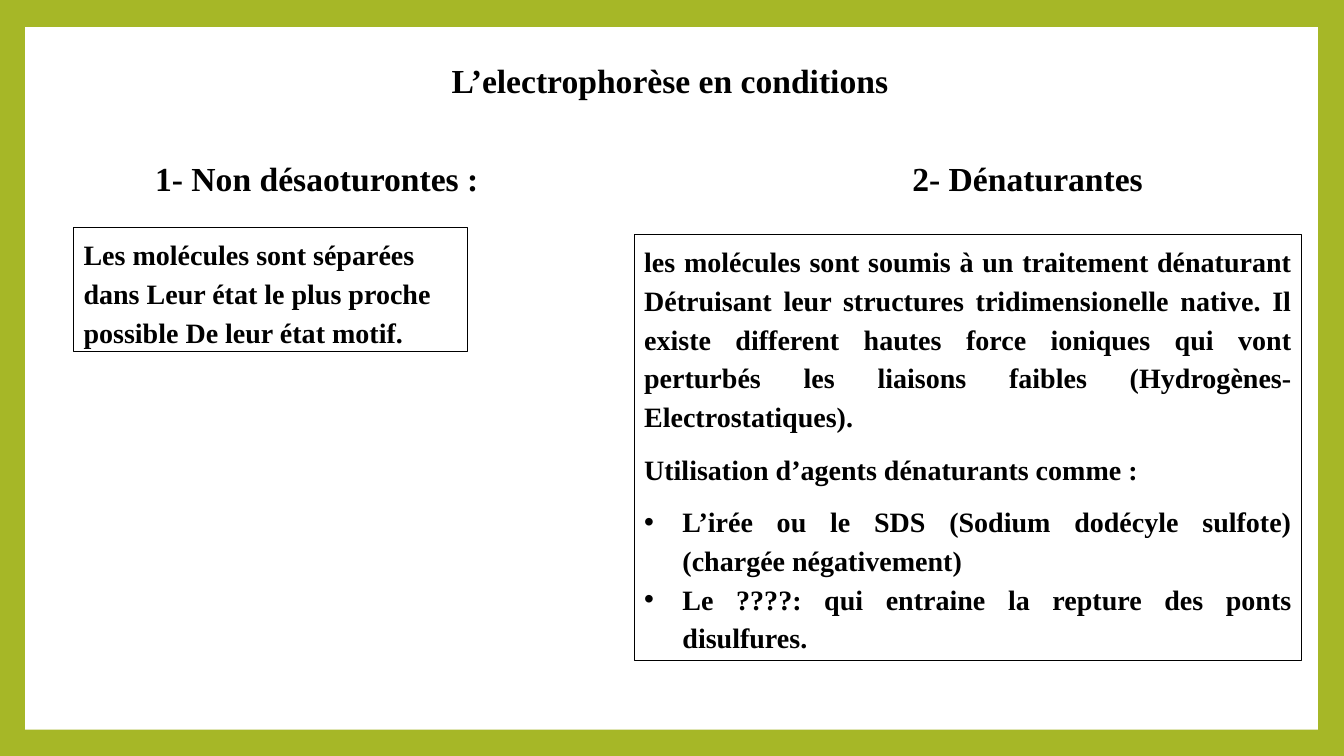
from lxml import etree
from pptx import Presentation
from pptx.dml.color import RGBColor
from pptx.enum.shapes import MSO_SHAPE
from pptx.enum.text import MSO_ANCHOR, PP_ALIGN
from pptx.oxml.ns import qn
from pptx.util import Inches, Pt

RECT = MSO_SHAPE.RECTANGLE
TOP = MSO_ANCHOR.TOP
LEFT, JUSTIFY = PP_ALIGN.LEFT, PP_ALIGN.JUSTIFY

GREEN = RGBColor(0xA6, 0xB7, 0x27)
WHITE = RGBColor(0xFF, 0xFF, 0xFF)
BLACK = RGBColor(0, 0, 0)
FONT = "Times New Roman"
HEADING_SIZE, BODY_SIZE = 24, 20
INDENT = 0.38

PANEL = (0.25, 0.27, 12.82, 6.97)
HEADING_HEIGHT = 0.5
COLUMN_TOP = 1.52
HEADINGS = [
    ("L’electrophorèse en conditions", 4.38, 0.55, 4.58),
    ("1- Non désaoturontes :", 1.44, COLUMN_TOP, 3.53),
    ("2- Dénaturantes", 8.95, COLUMN_TOP, 2.51),
]
BOXES = [
    ((6.29, 2.33, 6.62, 4.22), JUSTIFY, [
        ("les molécules sont soumis à un traitement dénaturant Détruisant leur "
         "structures tridimensionelle native. Il existe different hautes force "
         "ioniques qui vont perturbés les liaisons faibles "
         "(Hydrogènes-Electrostatiques).", False, 10),
        ("Utilisation d’agents dénaturants comme : ", False, 10),
        ("L’irée ou le SDS (Sodium dodécyle sulfote) (chargée négativement)",
         True, 0),
        ("Le ????: qui entraine la repture des ponts disulfures.", True, 10),
    ]),
    ((0.73, 2.26, 3.91, 1.23), LEFT, [
        ("Les molécules sont séparées dans Leur état le plus proche possible "
         "De leur état motif.", False, 10),
    ]),
]


def add_text(p, text, size):
    r = p.add_run()
    r.text = text
    r.font.name = FONT
    r.font.size = Pt(size)
    r.font.bold = True
    r.font.color.rgb = BLACK


def add_bullet(p):
    pPr = p._p.get_or_add_pPr()
    pPr.set("marL", str(Inches(INDENT)))
    pPr.set("indent", str(-Inches(INDENT)))
    etree.SubElement(pPr, qn("a:buFont")).set("typeface", "Arial")
    etree.SubElement(pPr, qn("a:buChar")).set("char", "•")


def add_rect(s, place):
    sp = s.shapes.add_shape(RECT, *map(Inches, place))
    sp.shadow.inherit = False
    sp.fill.solid()
    sp.fill.fore_color.rgb = WHITE
    sp.line.fill.background()
    return sp


def add_heading(s, text, left, top, width):
    place = (left, top, width, HEADING_HEIGHT)
    tf = s.shapes.add_textbox(*map(Inches, place)).text_frame
    tf.word_wrap = False
    add_text(tf.paragraphs[0], text, HEADING_SIZE)


def add_box(s, place, align, paragraphs):
    sp = add_rect(s, place)
    sp.line.color.rgb = BLACK
    sp.line.width = Pt(0.75)
    tf = sp.text_frame
    tf.word_wrap = True
    tf.vertical_anchor = TOP
    for i, (text, bulleted, after) in enumerate(paragraphs):
        p = tf.add_paragraph() if i else tf.paragraphs[0]
        p.alignment = align
        p.line_spacing = 1.15
        p.space_after = Pt(after)
        if bulleted:
            add_bullet(p)
        add_text(p, text, BODY_SIZE)


def main():
    prs = Presentation()
    prs.slide_width, prs.slide_height = Inches(13.33), Inches(7.5)
    s = prs.slides.add_slide(prs.slide_layouts[6])
    s.background.fill.solid()
    s.background.fill.fore_color.rgb = GREEN
    add_rect(s, PANEL)
    for heading in HEADINGS:
        add_heading(s, *heading)
    for box in BOXES:
        add_box(s, *box)
    prs.save("out.pptx")


if __name__ == "__main__":
    main()
